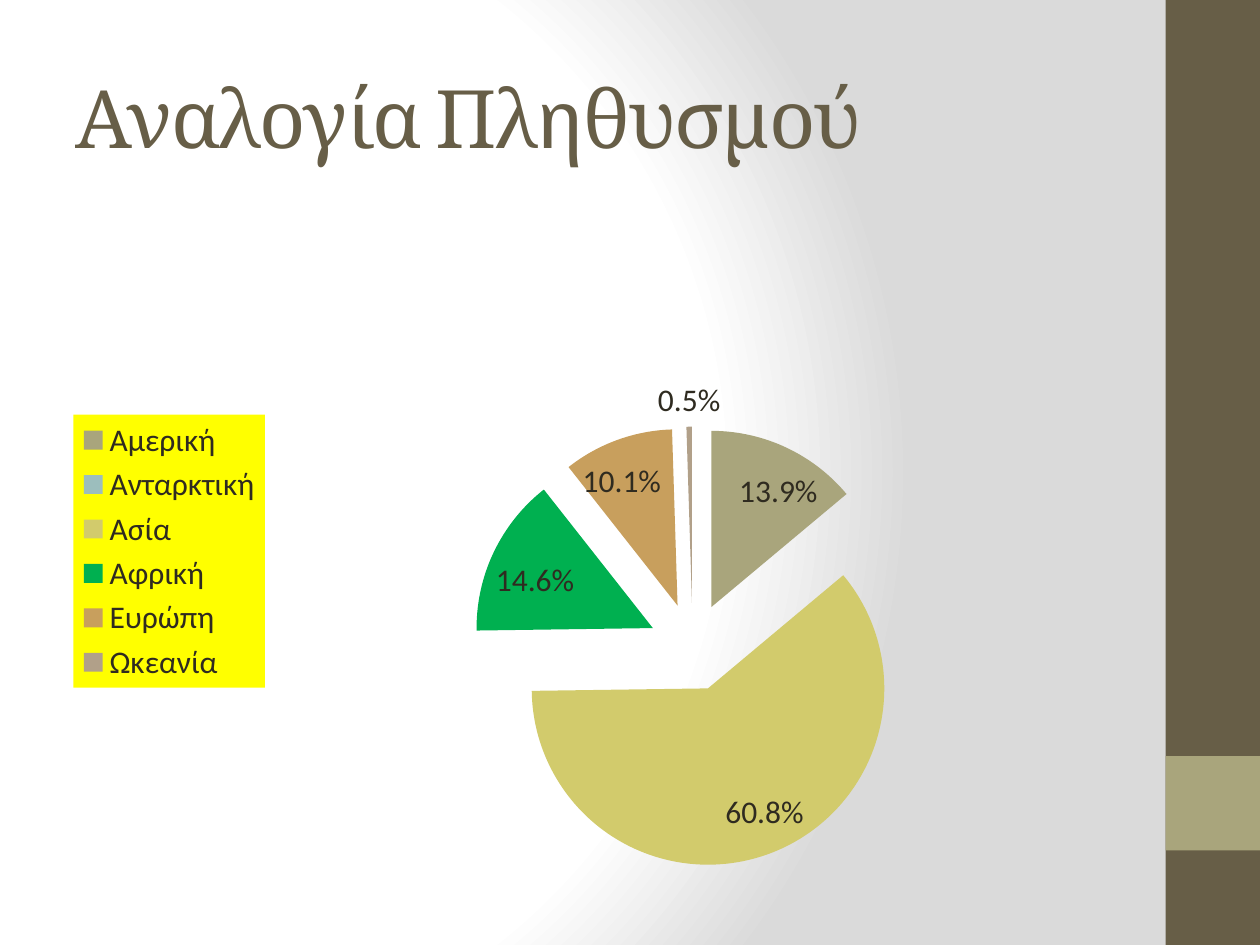
from lxml import etree
from pptx import Presentation, util as u
from pptx.chart.data import CategoryChartData
from pptx.dml.color import RGBColor
from pptx.enum import chart as charts, shapes, text
from pptx.oxml import parse_xml
from pptx.oxml.ns import nsdecls, qn

COLORS = {
    "white": "FFFFFF", "grey": "DADADA", "brown": "675E47",
    "sage": "A9A57C", "ink": "2F2B20", "yellow": "FFFF00",
}
# Continent: population share in percent, slice colour
SHARES = {
    "Αμερική": (13.9, "A9A57C"),
    "Ανταρκτική": (0, "9CBEBD"),
    "Ασία": (60.8, "D2CB6C"),
    "Αφρική": (14.6, "00B050"),
    "Ευρώπη": (10.1, "C89F5D"),
    "Ωκεανία": (0.5, "B1A089"),
}


def rgb(name):
    return RGBColor.from_string(COLORS[name])


def paint_background(slide):
    slide.background.fill.gradient()
    gradient = next(slide.element.iter(qn("a:gradFill")))
    for child in list(gradient):
        gradient.remove(child)
    stops = etree.SubElement(gradient, qn("a:gsLst"))
    for position, color in ((0, "white"), (75, "white"), (100, "grey")):
        stop = etree.SubElement(stops, qn("a:gs"), pos=str(position * 1000))
        etree.SubElement(stop, qn("a:srgbClr"), val=COLORS[color])
    circle = etree.SubElement(gradient, qn("a:path"), path="circle")
    etree.SubElement(circle, qn("a:fillToRect"),
                     l="20000", t="50000", r="100000", b="50000")


def add_band(slide, top, height, color):
    band = slide.shapes.add_shape(
        shapes.MSO_SHAPE.RECTANGLE,
        u.Inches(9.25), u.Inches(top), u.Inches(0.75), u.Inches(height))
    band.shadow.inherit = False
    band.fill.solid()
    band.fill.fore_color.rgb = rgb(color)
    band.line.fill.background()


def add_title(slide, wording):
    title = slide.shapes.add_textbox(
        u.Inches(0.5), u.Inches(0.3), u.Inches(8.33), u.Inches(1.25))
    frame = title.text_frame
    frame.word_wrap = True
    frame.vertical_anchor = text.MSO_ANCHOR.MIDDLE
    run = frame.paragraphs[0].add_run()
    run.text = wording
    run.font.name = "Cambria"
    run.font.size = u.Pt(46)
    run.font.color.rgb = rgb("brown")
    run.font._element.set("spc", "-100")


def place_plot(chart, **fractions):
    plot_area = chart._chartSpace.chart.plotArea
    for old in plot_area.findall(qn("c:layout")):
        plot_area.remove(old)
    layout = etree.Element(qn("c:layout"))
    manual = etree.SubElement(layout, qn("c:manualLayout"))
    settings = {"layoutTarget": "inner", "xMode": "edge", "yMode": "edge", **fractions}
    for tag, value in settings.items():
        etree.SubElement(manual, qn(f"c:{tag}"), val=str(value))
    plot_area.insert(0, layout)


def add_legend(chart):
    chart.has_legend = True
    legend = chart.legend
    legend.position = charts.XL_LEGEND_POSITION.LEFT
    legend.include_in_layout = False
    # Yellow panel behind the entries
    panel = parse_xml(
        f'<c:spPr {nsdecls("c", "a")}><a:solidFill>'
        f'<a:srgbClr val="{COLORS["yellow"]}"/></a:solidFill></c:spPr>')
    legend._element.find(qn("c:overlay")).addnext(panel)


def add_population_pie(slide):
    data = CategoryChartData()
    data.categories = list(SHARES)
    data.add_series("Series 1", [share for share, _ in SHARES.values()])
    chart = slide.shapes.add_chart(
        charts.XL_CHART_TYPE.PIE_EXPLODED, u.Inches(0.5), u.Inches(1.75),
        u.Inches(8.33), u.Inches(5.25), data).chart
    chart.has_title = False
    chart.font.name = "Calibri"
    chart.font.size = u.Pt(18)
    chart.font.color.rgb = rgb("ink")
    add_legend(chart)
    place_plot(chart, x=0.39, y=0.31, w=0.42, h=0.67)

    # Slices
    pie = chart.plots[0]
    pie.vary_by_categories = True
    shares = pie.series[0]
    for explosion in shares._element.findall(qn("c:explosion")):
        explosion.set("val", "25")
    for index, (_, color) in enumerate(SHARES.values()):
        fill = shares.points[index].format.fill
        fill.solid()
        fill.fore_color.rgb = RGBColor.from_string(color)
    for point in shares._element.findall(qn("c:dPt")):
        explosion = parse_xml(f'<c:explosion {nsdecls("c")} val="25"/>')
        point.find(qn("c:spPr")).addprevious(explosion)

    # Labels; the format leaves a zero share unlabelled
    pie.has_data_labels = True
    labels = pie.data_labels
    labels.show_value = True
    labels.show_percentage = False
    labels.number_format = '0.0"%";;'
    labels.number_format_is_linked = False
    labels.position = charts.XL_LABEL_POSITION.BEST_FIT


def main():
    deck = Presentation()
    deck.slide_width, deck.slide_height = u.Inches(10), u.Inches(7.5)
    slide = deck.slides.add_slide(deck.slide_layouts[6])
    paint_background(slide)
    add_band(slide, 0, 7.5, "brown")
    add_band(slide, 6, 0.75, "sage")
    add_title(slide, "Αναλογία Πληθυσμού")
    add_population_pie(slide)
    deck.save("out.pptx")


if __name__ == "__main__":
    main()
